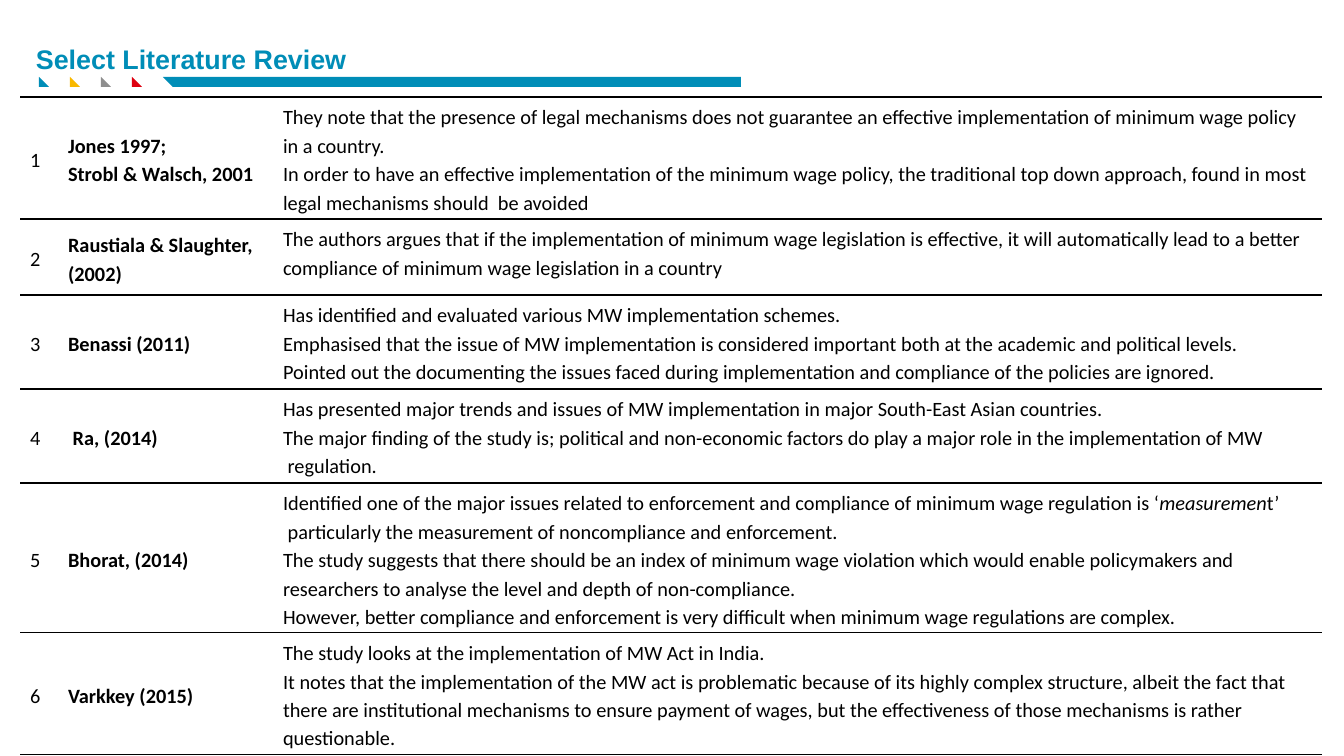
"""Build the literature review slide with its table of studies."""
from lxml import etree
from pptx import Presentation
from pptx.dml.color import RGBColor
from pptx.enum.shapes import MSO_CONNECTOR, MSO_SHAPE
from pptx.enum.text import MSO_ANCHOR
from pptx.oxml.ns import qn
from pptx.util import Emu, Pt

TRIANGLE = MSO_SHAPE.RIGHT_TRIANGLE
RECTANGLE = MSO_SHAPE.RECTANGLE
STRAIGHT = MSO_CONNECTOR.STRAIGHT
MIDDLE = MSO_ANCHOR.MIDDLE
TOP = MSO_ANCHOR.TOP

EMU_PER_PX = 914400 / 100.8
COLOURS = {
    "blue": "008DB7",
    "yellow": "F9B900",
    "grey": "8E8E8E",
    "red": "DE0010",
    "black": "000000",
}
ACCENT_TOP = 77
ACCENT_SIZE = 10
ACCENT_LEFT = 39
ACCENT_STEP = 31
COLUMN_WIDTHS = [38, 215, 1049]
ROW_HEIGHTS = [122, 76, 94, 94, 150, 122]

STUDIES = [
    (["Jones 1997;", "Strobl & Walsch, 2001"], [
        "They note that the presence of legal mechanisms does not guarantee an effective "
        "implementation of minimum wage policy",
        "in a country.",
        "In order to have an effective implementation of the minimum wage policy, the traditional "
        "top down approach, found in most legal mechanisms should  be avoided",
    ]),
    (["Raustiala & Slaughter,", "(2002)"], [
        "The authors argues that if the implementation of minimum wage legislation is effective, "
        "it will automatically lead to a better",
        "compliance of minimum wage legislation in a country",
    ]),
    (["Benassi (2011)"], [
        "Has identified and evaluated various MW implementation schemes.",
        "Emphasised that the issue of MW implementation is considered important both at the "
        "academic and political levels.",
        "Pointed out the documenting the issues faced during implementation and compliance of "
        "the policies are ignored.",
    ]),
    ([" Ra, (2014)"], [
        "Has presented major trends and issues of MW implementation in major South-East Asian "
        "countries.",
        "The major finding of the study is; political and non-economic factors do play a major "
        "role in the implementation of MW",
        " regulation.",
    ]),
    (["Bhorat, (2014)"], [
        "Identified one of the major issues related to enforcement and compliance of minimum "
        "wage regulation is ‘*measuremen*t’",
        " particularly the measurement of noncompliance and enforcement.",
        "The study suggests that there should be an index of minimum wage violation which would "
        "enable policymakers and",
        "researchers to analyse the level and depth of non-compliance.",
        "However, better compliance and enforcement is very difficult when minimum wage "
        "regulations are complex.",
    ]),
    (["Varkkey (2015)"], [
        "The study looks at the implementation of MW Act in India.",
        "It notes that the implementation of the MW act is problematic because of its highly "
        "complex structure, albeit the fact that",
        "there are institutional mechanisms to ensure payment of wages, but the effectiveness of "
        "those mechanisms is rather",
        "questionable.",
    ]),
]


def px(length):
    """Turn a length in px into EMU."""
    return Emu(round(length * EMU_PER_PX))


def colour(name):
    """Look up a named colour."""
    return RGBColor.from_string(COLOURS[name])


def style_font(font, family, size, colour_name, bold=False, italic=False):
    """Set the look of one run."""
    font.name = family
    font.size = Pt(size)
    font.bold = bold
    font.italic = italic
    font.color.rgb = colour(colour_name)


def add_accent(slide, kind, left, width, colour_name, rotation=0):
    """Add one plain coloured piece of the strip below the title."""
    accent = slide.shapes.add_shape(
        kind, px(left), px(ACCENT_TOP), px(width), px(ACCENT_SIZE))
    accent.shadow.inherit = False
    accent.fill.solid()
    accent.fill.fore_color.rgb = colour(colour_name)
    accent.line.fill.background()
    accent.rotation = rotation


def add_seam(slide, left):
    """Add the thin upright line at the start of the bar."""
    seam = slide.shapes.add_connector(
        STRAIGHT, px(left), px(ACCENT_TOP), px(left), px(ACCENT_TOP + ACCENT_SIZE))
    seam.line.color.rgb = colour("blue")
    seam.line.width = Pt(0.5)
    etree.SubElement(seam._element.spPr, qn("a:effectLst"))


def add_title(slide, wording):
    """Add the slide title."""
    title = slide.shapes.add_textbox(px(26), px(38), px(384), px(42))
    title.text_frame.word_wrap = True
    title.text_frame.text = wording
    style_font(title.text_frame.paragraphs[0].runs[0].font, "Arial", 19.2, "blue", bold=True)


def rule_cell(cell):
    """Draw rules above and below a cell and none at its sides."""
    properties = cell._tc.get_or_add_tcPr()
    for position, side in enumerate(("lnL", "lnR", "lnT", "lnB")):
        border = etree.Element(qn(f"a:{side}"), w=str(Pt(1)))
        if side in ("lnT", "lnB"):
            fill = etree.SubElement(border, qn("a:solidFill"))
            etree.SubElement(fill, qn("a:srgbClr"), val=COLOURS["black"])
        else:
            etree.SubElement(border, qn("a:noFill"))
        properties.insert(position, border)


def fill_cell(cell, lines, bold=False, anchor=MIDDLE):
    """Write lines into a cell, with parts between asterisks in italics."""
    cell.fill.background()
    cell.vertical_anchor = anchor
    cell.margin_top = px(5)
    cell.margin_bottom = px(3)
    rule_cell(cell)
    cell.text_frame.text = "\n".join(lines).replace("*", "")
    for paragraph, line in zip(cell.text_frame.paragraphs, lines):
        parts = line.split("*")
        paragraph.line_spacing = 1.15
        paragraph.text = parts[0]
        for part in parts[1:]:
            paragraph.add_run().text = part
        for order, run in enumerate(paragraph.runs):
            style_font(run.font, "Calibri", 14.5, "black", bold, italic=order % 2 == 1)


def add_studies(slide):
    """Add the table of numbered studies."""
    frame = slide.shapes.add_table(
        len(STUDIES), len(COLUMN_WIDTHS), px(20), px(97),
        px(sum(COLUMN_WIDTHS)), px(sum(ROW_HEIGHTS)))
    table = frame.table
    table.first_row = False
    table.horz_banding = False
    for column, width in zip(table.columns, COLUMN_WIDTHS):
        column.width = px(width)
    for row, height in zip(table.rows, ROW_HEIGHTS):
        row.height = px(height)
    for index, (authors, findings) in enumerate(STUDIES):
        fill_cell(table.cell(index, 0), [str(index + 1)])
        fill_cell(table.cell(index, 1), authors, bold=True)
        fill_cell(table.cell(index, 2), findings, anchor=TOP)


def main():
    """Build and save the slide."""
    deck = Presentation()
    deck.slide_width, deck.slide_height = px(1344), px(756)
    slide = deck.slides.add_slide(deck.slide_layouts[6])
    for order, name in enumerate(("blue", "yellow", "grey", "red")):
        add_accent(slide, TRIANGLE, ACCENT_LEFT + order * ACCENT_STEP, ACCENT_SIZE, name)
    add_accent(slide, RECTANGLE, 173, 568, "blue")
    add_accent(slide, TRIANGLE, 163, ACCENT_SIZE, "blue", rotation=180)
    add_seam(slide, 174)
    add_title(slide, "Select Literature Review")
    add_studies(slide)
    deck.save("out.pptx")


if __name__ == "__main__":
    main()
